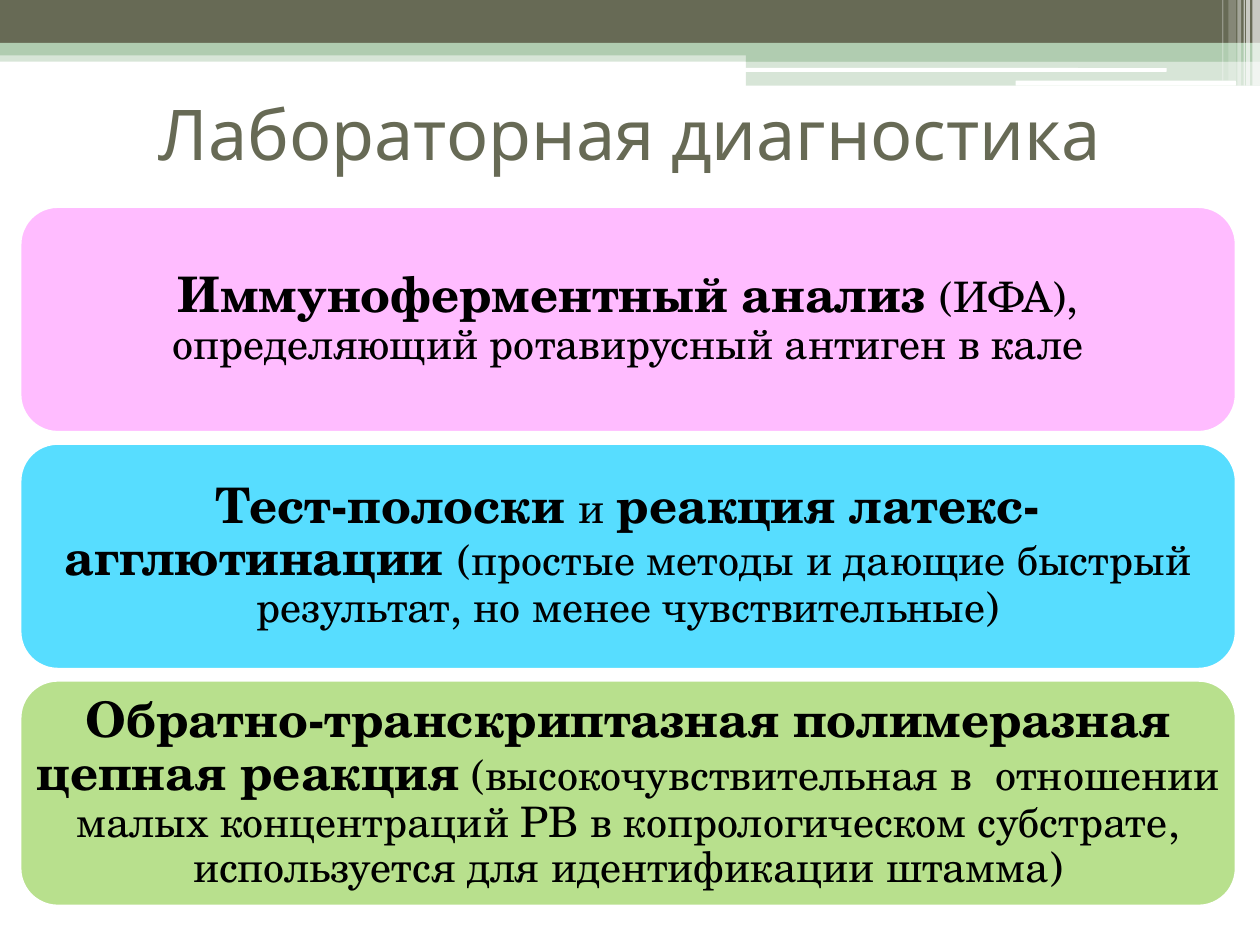
import pptx
import pptx.dml.color
import pptx.enum.shapes
import pptx.enum.text
import pptx.oxml
import pptx.oxml.ns
import pptx.util

Inches = pptx.util.Inches
Pt = pptx.util.Pt
SHAPES = pptx.enum.shapes.MSO_SHAPE

COLORS = {
    "olive": "676A55",
    "sage": "B0CCB0",
    "white": "FFFFFF",
    "black": "000000",
    "pink": "FF99FF",
    "blue": "00CCFF",
    "green": "92D050",
}
TITLE_FONT = "Karla"
BODY_FONT = "TeX Gyre Schola"

# Header bands: left, top, width, height, colour, opacity in percent
BANDS = [
    (0, 0.4, 10, 0.09, "sage", 50),
    (0, 0, 10, 0.34, "olive", 100),
    (0, 0.34, 10, 0.1, "sage", 100),
    (5.92, 0.39, 4.08, 0.1, "sage", 100),
    (5.92, 0.48, 4.08, 0.2, "sage", 50),
]
# White rounded bars: left, top, width, height
BARS = [(5.91, 0.54, 3.35, 0.03), (8.06, 0.64, 1.75, 0.04)]
# White vertical stripes: left, width, height, opacity in percent
STRIPES = [
    (9.94, 0.06, 0.68, 65),
    (9.89, 0.03, 0.68, 65),
    (9.87, 0.01, 0.68, 60),
    (9.82, 0.03, 0.68, 40),
    (9.75, 0.06, 0.64, 20),
    (9.7, 0.01, 0.64, 30),
]

# Cards: colour, opacity, runs that alternate between bold and regular
CARDS = [
    ("pink", 65, [
        "Иммуноферментный анализ ",
        "(ИФА), определяющий ротавирусный антиген в кале",
    ]),
    ("blue", 66, [
        "Тест-полоски ",
        "и ",
        "реакция латекс-агглютинации ",
        "(простые методы и дающие быстрый результат, но менее чувствительные)",
    ]),
    ("green", 65, [
        "Обратно-транскриптазная полимеразная цепная реакция",
        " (высокочувствительная в  отношении малых концентраций РВ "
        "в копрологическом субстрате, используется для идентификации штамма)",
    ]),
]
CARD_TOP, CARD_PITCH = 1.64, 1.88


def rgb(name):
    return pptx.dml.color.RGBColor.from_string(COLORS[name])


def add_block(slide, kind, left, top, width, height, color, opacity=100):
    """Add a filled shape without outline or shadow."""
    shape = slide.shapes.add_shape(
        kind, Inches(left), Inches(top), Inches(width), Inches(height))
    shape.shadow.inherit = False
    shape.line.fill.background()
    shape.fill.solid()
    shape.fill.fore_color.rgb = rgb(color)
    if opacity < 100:
        color_element = shape.fill._xPr.find(".//" + pptx.oxml.ns.qn("a:srgbClr"))
        alpha = pptx.oxml.parse_xml(
            f'<a:alpha {pptx.oxml.ns.nsdecls("a")} val="{opacity * 1000}"/>')
        color_element.append(alpha)
    return shape


def add_header(slide):
    for left, top, width, height, color, opacity in BANDS:
        add_block(slide, SHAPES.RECTANGLE, left, top, width, height, color, opacity)
    for left, top, width, height in BARS:
        add_block(slide, SHAPES.ROUNDED_RECTANGLE, left, top, width, height, "white")
    for left, width, height, opacity in STRIPES:
        add_block(slide, SHAPES.RECTANGLE, left, 0, width, height, "white", opacity)


def set_title(slide, text):
    title = slide.shapes.title
    title.left, title.top = Inches(0.5), Inches(0.62)
    title.width, title.height = Inches(9), Inches(0.86)
    frame = title.text_frame
    frame.text = text
    frame.auto_size = pptx.enum.text.MSO_AUTO_SIZE.NONE
    frame.vertical_anchor = pptx.enum.text.MSO_ANCHOR.MIDDLE
    paragraph = frame.paragraphs[0]
    paragraph.alignment = pptx.enum.text.PP_ALIGN.CENTER
    paragraph.font.name = TITLE_FONT
    paragraph.font.size = Pt(40)
    paragraph.font.color.rgb = rgb("olive")


def add_card(slide, top, color, opacity, texts):
    card = add_block(slide, SHAPES.ROUNDED_RECTANGLE, 0.16, top, 9.65, 1.79,
                     color, opacity)
    card.line.color.rgb = rgb("white")
    card.line.width = Pt(1.5)

    # The rounded corners already add to these insets
    frame = card.text_frame
    frame.word_wrap = True
    frame.vertical_anchor = pptx.enum.text.MSO_ANCHOR.MIDDLE
    frame.margin_left = frame.margin_right = Inches(0.03)
    frame.margin_top = frame.margin_bottom = 0

    paragraph = frame.paragraphs[0]
    paragraph.alignment = pptx.enum.text.PP_ALIGN.CENTER
    paragraph.line_spacing = 0.9
    for index, text in enumerate(texts):
        run = paragraph.add_run()
        run.text = text
        run.font.name = BODY_FONT
        run.font.color.rgb = rgb("black")
        run.font.bold = index % 2 == 0
        run.font.size = Pt(28 if run.font.bold else 24)


def main():
    presentation = pptx.Presentation()
    presentation.slide_width = Inches(10)
    presentation.slide_height = Inches(7.5)
    slide = presentation.slides.add_slide(presentation.slide_layouts[5])

    add_header(slide)
    set_title(slide, "Лабораторная диагностика")
    for index, (color, opacity, texts) in enumerate(CARDS):
        add_card(slide, CARD_TOP + index * CARD_PITCH, color, opacity, texts)

    presentation.save("out.pptx")


if __name__ == "__main__":
    main()
